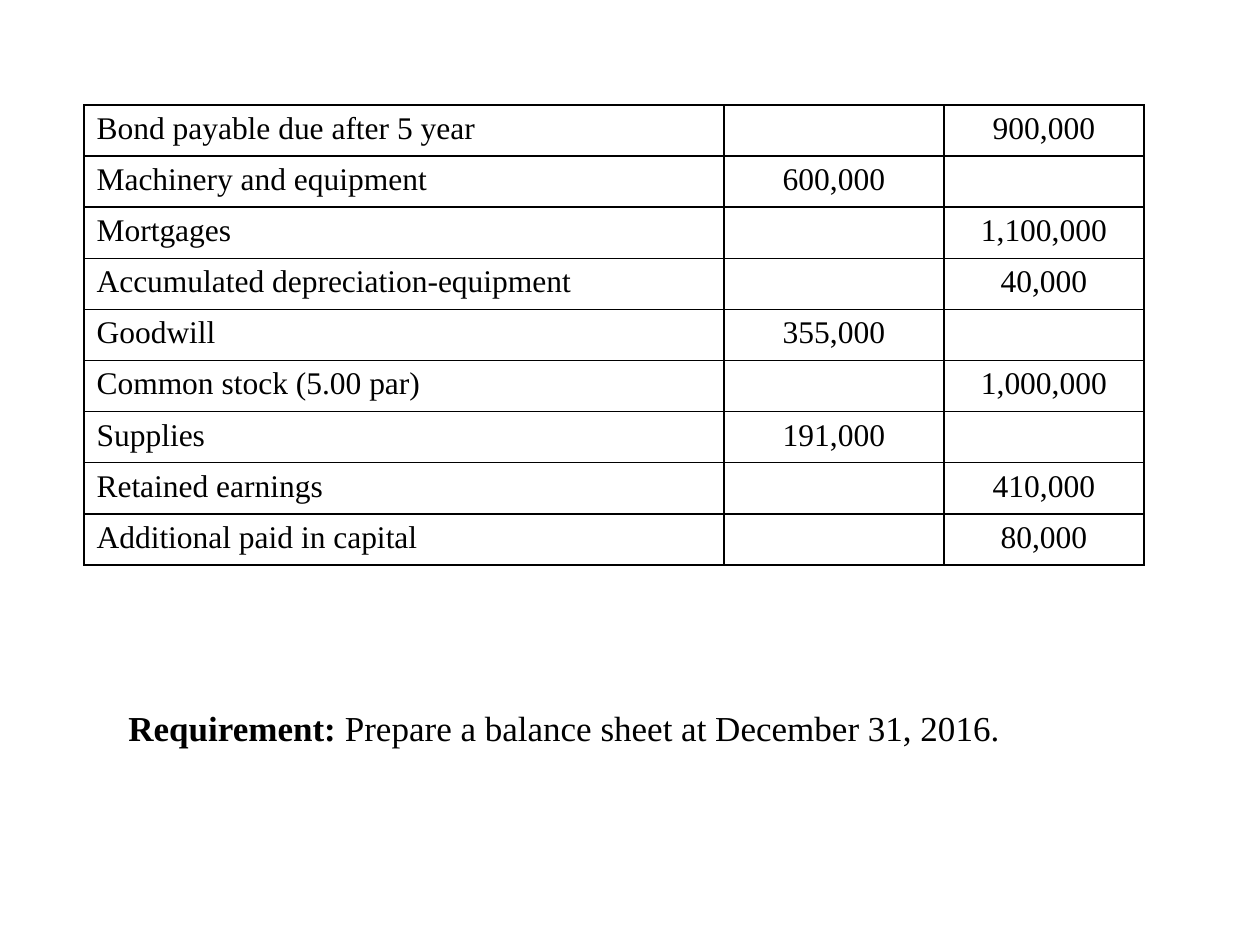
from typing import NamedTuple

from lxml.etree import SubElement
from pptx import Presentation
from pptx.dml.color import RGBColor
from pptx.enum.text import MSO_AUTO_SIZE as AutoSize, PP_ALIGN as Align
from pptx.oxml.ns import qn
from pptx.util import Emu, Pt

PX = 914400 // 126
BLACK = "000000"
FONT = "Times New Roman"


class Account(NamedTuple):
    name: str
    debit: str = ""
    credit: str = ""


class Box(NamedTuple):
    left: int
    top: int
    width: int
    height: int


ACCOUNTS = [
    Account("Bond payable due after 5 year", credit="900,000"),
    Account("Machinery and equipment", debit="600,000"),
    Account("Mortgages", credit="1,100,000"),
    Account("Accumulated depreciation-equipment", credit="40,000"),
    Account("Goodwill", debit="355,000"),
    Account("Common stock (5.00 par)", credit="1,000,000"),
    Account("Supplies", debit="191,000"),
    Account("Retained earnings", credit="410,000"),
    Account("Additional paid in capital", credit="80,000"),
]
COLUMNS = [640, 220, 200]
ROW_HEIGHT = 51
TABLE = Box(84, 105, sum(COLUMNS), ROW_HEIGHT * len(ACCOUNTS))
REQUIREMENT = Box(116, 700, 1008, 55)


def px(n: int) -> Emu:
    return Emu(n * PX)


def color(value: str) -> RGBColor:
    return RGBColor.from_string(value)


def add_run(p, text: str, size: int, bold: bool = False) -> None:
    r = p.add_run()
    r.text = text
    for key, value in {"name": FONT, "size": Pt(size), "bold": bold}.items():
        setattr(r.font, key, value)
    r.font.color.rgb = color(BLACK)


def add_borders(cell, width: int = 1) -> None:
    tc_pr = cell._tc.get_or_add_tcPr()
    for side in ("lnL", "lnR", "lnT", "lnB"):
        ln = SubElement(tc_pr, qn(f"a:{side}"), w=str(Pt(width)))
        fill = SubElement(ln, qn("a:solidFill"))
        SubElement(fill, qn("a:srgbClr"), val=BLACK)


def add_accounts(s, box: Box, accounts: list[Account]) -> None:
    table = s.shapes.add_table(len(accounts), len(COLUMNS), *map(px, box)).table
    for key in ("first_row", "horz_banding"):
        setattr(table, key, False)
    for column, width in zip(table.columns, COLUMNS):
        column.width = px(width)
    for row, account in zip(table.rows, accounts):
        row.height = px(ROW_HEIGHT)
        for i, (cell, text) in enumerate(zip(row.cells, account)):
            # Borders come before the fill in the cell properties
            add_borders(cell)
            cell.fill.background()
            p = cell.text_frame.paragraphs[0]
            p.alignment = Align.CENTER if i else Align.LEFT
            if text:
                add_run(p, text, 18)


def add_requirement(s, box: Box) -> None:
    tf = s.shapes.add_textbox(*map(px, box)).text_frame
    for key, value in {"word_wrap": True,
                       "auto_size": AutoSize.SHAPE_TO_FIT_TEXT}.items():
        setattr(tf, key, value)
    p = tf.paragraphs[0]
    add_run(p, "Requirement: ", 20, bold=True)
    add_run(p, "Prepare a balance sheet at December 31, 2016.", 20)


def main() -> None:
    prs = Presentation()
    prs.slide_width, prs.slide_height = px(1260), px(945)
    s = prs.slides.add_slide(prs.slide_layouts[6])
    # Account balances: name, debit, credit
    add_accounts(s, TABLE, ACCOUNTS)
    # Task below the table
    add_requirement(s, REQUIREMENT)
    prs.save("out.pptx")


if __name__ == "__main__":
    main()
